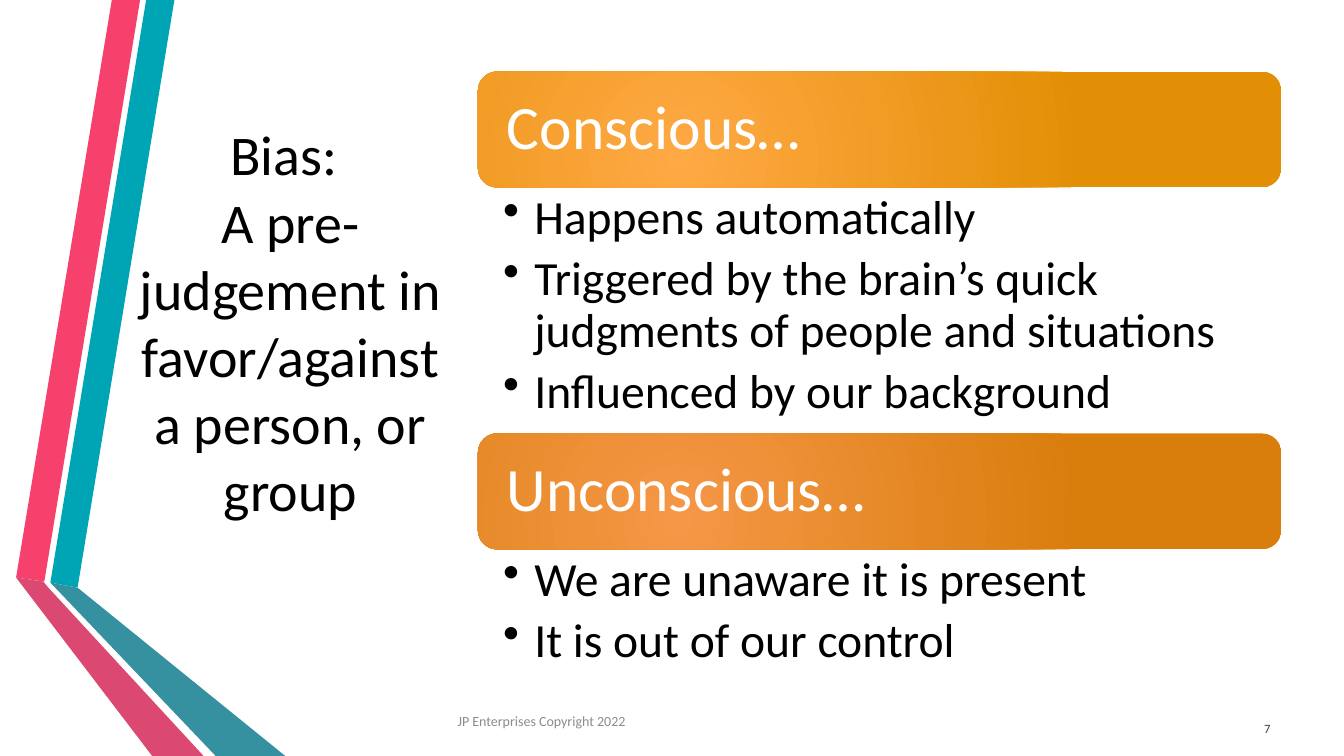
from lxml import etree
from pptx import Presentation
from pptx.dml.color import RGBColor
from pptx.enum.shapes import MSO_SHAPE
from pptx.enum.text import MSO_ANCHOR, PP_ALIGN
from pptx.oxml.ns import qn
from pptx.util import Emu, Pt

TOP, MIDDLE = MSO_ANCHOR.TOP, MSO_ANCHOR.MIDDLE
LEFT, CENTER, RIGHT = PP_ALIGN.LEFT, PP_ALIGN.CENTER, PP_ALIGN.RIGHT
ROUNDED = MSO_SHAPE.ROUNDED_RECTANGLE

PX = 9144  # 100 px to the inch
SLIDE_SIZE = (1333, 750)
FONT = "Calibri"

RIBBONS = [
    ("00A5B5", [(50, 578), (77, 583), (173, 0), (145, 0)]),
    ("F5416C", [(139, 0), (111, 0), (16, 573), (44, 577)]),
    ("35909F", [(50, 578), (214, 750), (283, 750), (77, 583)]),
    ("DB4871", [(202, 750), (48, 583), (43, 577), (16, 573), (151, 750)]),
]

TITLE = "Bias: \vA pre-judgement in favor/against a person, or group"
FOOTER = "JP Enterprises Copyright 2022"
PAGE_NUMBER = "7"

SECTIONS = [
    {
        "heading": "Conscious…",
        "colors": ("FFA945", "E38F05"),
        "points": [
            "Happens automatically",
            "Triggered by the brain’s quick judgments of people and situations",
            "Influenced by our background",
        ],
        "points_height": 244,
    },
    {
        "heading": "Unconscious…",
        "colors": ("F59746", "D97D0D"),
        "points": ["We are unaware it is present", "It is out of our control"],
        "points_height": 129,
    },
]
SECTION_LEFT, SECTION_TOP, SECTION_WIDTH, BANNER_HEIGHT = 474, 71, 797, 115
BULLET_INDENT = 31

TITLE_STYLE = {"size": 40, "color": "000000", "align": CENTER}
NUMBER_STYLE = {"size": 9, "color": "404040", "align": RIGHT, "anchor": MIDDLE}
FOOTER_STYLE = {"size": 10, "color": "8C8C8C", "anchor": MIDDLE}
HEADING_STYLE = {"size": 44, "color": "FFFFFF", "anchor": MIDDLE,
                 "insets": (23, 18, 23, 18), "line_spacing": 0.9}
POINT_STYLE = {"size": 34, "color": "000000", "insets": (25, 6, 34, 6),
               "line_spacing": 0.9, "space_after": 7, "bullet": "•"}


def px(length):
    return Emu(length * PX)


def rgb(value):
    return RGBColor.from_string(value)


def add_bullet(para, char):
    properties = para._p.get_or_add_pPr()
    properties.set("marL", str(px(BULLET_INDENT)))
    properties.set("indent", str(px(-BULLET_INDENT)))
    etree.SubElement(properties, qn("a:buChar"), char=char)


def write(shape, lines, style):
    frame = shape.text_frame
    frame.word_wrap = True
    frame.vertical_anchor = style.get("anchor", TOP)
    sides = ("margin_left", "margin_top", "margin_right", "margin_bottom")
    for side, inset in zip(sides, style.get("insets", (10, 5, 10, 5))):
        setattr(frame, side, px(inset))
    para_format = {
        "alignment": style.get("align", LEFT),
        "line_spacing": style.get("line_spacing", 1.0),
        "space_after": Pt(style.get("space_after", 0)),
    }
    font_format = {"name": FONT, "size": Pt(style["size"])}
    for index, line in enumerate(lines):
        para = frame.add_paragraph() if index else frame.paragraphs[0]
        para.text = line
        if "bullet" in style:
            add_bullet(para, style["bullet"])
        for name, value in para_format.items():
            setattr(para, name, value)
        for span in para.runs:
            for name, value in font_format.items():
                setattr(span.font, name, value)
            span.font.color.rgb = rgb(style["color"])


def add_text(page, bounds, lines, style):
    box = page.shapes.add_textbox(*map(px, bounds))
    write(box, lines, style)


def add_ribbon(page, color, points):
    builder = page.shapes.build_freeform(*points[0], scale=PX)
    builder.add_line_segments(points[1:], close=True)
    ribbon = builder.convert_to_shape()
    ribbon.shadow.inherit = False
    ribbon.fill.solid()
    ribbon.fill.fore_color.rgb = rgb(color)
    ribbon.line.fill.background()


def fill_radial(shape, colors):
    """Fill with a circular gradient centred in the lower left."""
    shape.fill.gradient()
    for stop, color, position in zip(shape.fill.gradient_stops, colors, (0, 1)):
        stop.color.rgb = rgb(color)
        stop.position = position
    gradient = shape._element.spPr.find(qn("a:gradFill"))
    linear = gradient.find(qn("a:lin"))
    circle = etree.Element(qn("a:path"), path="circle")
    etree.SubElement(circle, qn("a:fillToRect"),
                     l="50000", t="100000", r="100000", b="50000")
    gradient.replace(linear, circle)


def add_section(page, section, top):
    """Draw a banner with its points below; return the bottom edge."""
    bounds = (SECTION_LEFT, top, SECTION_WIDTH, BANNER_HEIGHT)
    banner = page.shapes.add_shape(ROUNDED, *map(px, bounds))
    banner.shadow.inherit = False
    banner.line.fill.background()
    fill_radial(banner, section["colors"])
    write(banner, [section["heading"]], HEADING_STYLE)
    points_top = top + BANNER_HEIGHT
    height = section["points_height"]
    add_text(page, (SECTION_LEFT, points_top, SECTION_WIDTH, height),
             section["points"], POINT_STYLE)
    return points_top + height


def main():
    deck = Presentation()
    deck.slide_width, deck.slide_height = map(px, SLIDE_SIZE)
    page = deck.slides.add_slide(deck.slide_layouts[6])
    for color, points in RIBBONS:
        add_ribbon(page, color, points)
    add_text(page, (113, 114, 350, 521), [TITLE], TITLE_STYLE)
    add_text(page, (1155, 703, 115, 40), [PAGE_NUMBER], NUMBER_STYLE)
    add_text(page, (444, 695, 447, 40), [FOOTER], FOOTER_STYLE)
    top = SECTION_TOP
    for section in SECTIONS:
        top = add_section(page, section, top)
    deck.save("out.pptx")


if __name__ == "__main__":
    main()
